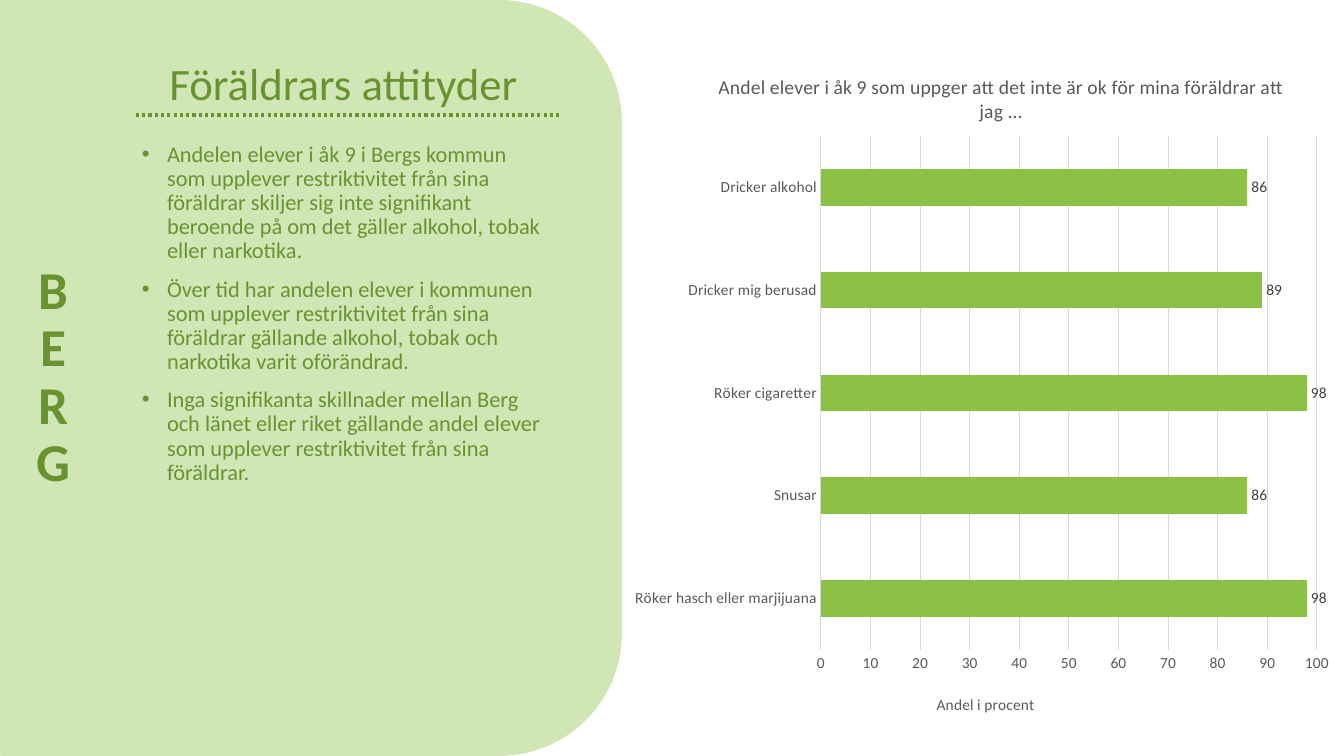
import pptx
import pptx.chart.data
import pptx.dml.color
import pptx.enum.chart
import pptx.enum.dml
import pptx.enum.shapes
import pptx.enum.text
import pptx.oxml
import pptx.oxml.ns
import pptx.util

RGB = pptx.dml.color.RGBColor
PALE = RGB(0xD1, 0xE6, 0xB5)
DARK = RGB(0x69, 0x93, 0x31)
BAR = RGB(0x8B, 0xC1, 0x45)
GRID = RGB(0xD9, 0xD9, 0xD9)
AXIS_TEXT = RGB(0x59, 0x59, 0x59)
LABEL_TEXT = RGB(0x40, 0x40, 0x40)
BLACK = RGB(0, 0, 0)
FONT = "Calibri"
EMU_PER_PX = 914400 / 100.8

HEADING = "Föräldrars attityder "
PLACE = "BERG"
BULLETS = [
    [("Andelen elever i åk 9 i Bergs kommun som upplever restriktivitet från sina "
      "föräldrar skiljer sig inte signifikant beroende på om det gäller alkohol, "
      "tobak eller narkotika.", False)],
    [("Över tid har andelen elever i kommunen som upplever restriktivitet från sina "
      "föräldrar gällande alkohol, tobak och narkotika varit oförändrad", False),
     (".", True)],
    [("Inga signifikanta skillnader mellan Berg och länet eller riket gällande andel "
      "elever som upplever restriktivitet från sina föräldrar.", False)],
]
CHART_TITLE = "Andel elever i åk 9 som uppger att det inte är ok för mina föräldrar att jag ..."
AXIS_TITLE = "Andel i procent"
ATTITUDES = {
    "Röker hasch eller marjijuana": 98,
    "Snusar": 86,
    "Röker cigaretter": 98,
    "Dricker mig berusad": 89,
    "Dricker alkohol": 86,
}

PANEL_BOX = (-115, 0, 737, 756)
HEADING_BOX = (110, 33, 477, 82)
BODY_BOX = (132, 138, 424, 435)
PLACE_BOX = (0, 12, 106, 733)
CHART_BOX = (621, 46, 723, 684)
PLOT_BOX = (821, 136, 496, 514)
CHART_TITLE_AT = (715, 70)
AXIS_TITLE_AT = (934, 691)
RULE = (136, 115, 560, 115)


def px(*lengths):
    return [round(n * EMU_PER_PX) for n in lengths]


def style(font, size, color, bold=False, italic=False):
    font.name, font.size, font.color.rgb = FONT, pptx.util.Pt(size), color
    font.bold, font.italic = bold, italic


def add_run(p, text, size, color, **look):
    r = p.add_run()
    r.text = text
    style(r.font, size, color, **look)


def add_panel(slide, kind, box):
    sp = slide.shapes.add_shape(kind, *px(*box))
    sp.shadow.inherit = False
    sp.fill.solid()
    sp.fill.fore_color.rgb = PALE
    sp.line.fill.background()
    return sp


def add_label(slide, box, text, size, bold=False):
    tf = slide.shapes.add_textbox(*px(*box)).text_frame
    tf.word_wrap = True
    tf.vertical_anchor = pptx.enum.text.MSO_ANCHOR.BOTTOM
    p = tf.paragraphs[0]
    p.alignment = pptx.enum.text.PP_ALIGN.CENTER
    p.line_spacing = 0.9
    add_run(p, text, size, DARK, bold=bold)
    return tf


def fill_body(tf):
    tf.word_wrap = True
    tf.vertical_anchor = pptx.enum.text.MSO_ANCHOR.TOP
    for i, runs in enumerate(BULLETS):
        p = tf.add_paragraph() if i else tf.paragraphs[0]
        p.alignment = pptx.enum.text.PP_ALIGN.LEFT
        p.line_spacing = 0.9
        p.space_before = pptx.util.Pt(10)
        pPr = p._p.get_or_add_pPr()
        indent = pptx.util.Inches(0.25)
        pPr.set("marL", str(indent))
        pPr.set("indent", str(-indent))
        for tag, key, value in (("buFont", "typeface", "Arial"), ("buChar", "char", "•")):
            pPr.append(pptx.oxml.parse_xml(
                f'<a:{tag} {pptx.oxml.ns.nsdecls("a")} {key}="{value}"/>'))
        for text, italic in runs:
            add_run(p, text, 16, DARK, italic=italic)


def place(element, before, x, y, w=None, h=None):
    left, top, width, height = CHART_BOX
    parts = {"xMode": "edge", "yMode": "edge",
             "x": round((x - left) / width, 4), "y": round((y - top) / height, 4)}
    if w:
        parts = {"layoutTarget": "inner", **parts,
                 "w": round(w / width, 4), "h": round(h / height, 4)}
    inner = "".join(f'<c:{k} val="{v}"/>' for k, v in parts.items())
    for old in element.findall(pptx.oxml.ns.qn("c:layout")):
        element.remove(old)
    layout = pptx.oxml.parse_xml(
        f'<c:layout {pptx.oxml.ns.nsdecls("c")}><c:manualLayout>{inner}'
        '</c:manualLayout></c:layout>')
    element.insert(before, layout)


def set_title(title, text, size, at):
    p = title.text_frame.paragraphs[0]
    p.alignment = pptx.enum.text.PP_ALIGN.CENTER
    add_run(p, text, size, AXIS_TEXT)
    place(title._element, 1, *at)


def add_attitude_chart(slide):
    data = pptx.chart.data.CategoryChartData(number_format="0")
    data.categories = list(ATTITUDES)
    data.add_series("Andel", list(ATTITUDES.values()))
    chart = slide.shapes.add_chart(
        pptx.enum.chart.XL_CHART_TYPE.BAR_CLUSTERED, *px(*CHART_BOX), data).chart
    style(chart.font, 11, BLACK)
    chart.has_legend = False
    chart.has_title = True
    set_title(chart.chart_title, CHART_TITLE, 14, CHART_TITLE_AT)
    chart.chart_title.include_in_layout = False

    plot = chart.plots[0]
    plot.vary_by_categories = False
    plot.gap_width = 182
    place(chart._chartSpace.chart.plotArea, 0, *PLOT_BOX)
    series = plot.series[0]
    series.format.fill.solid()
    series.format.fill.fore_color.rgb = BAR
    labels = series.data_labels
    labels.show_value = True
    labels.position = pptx.enum.chart.XL_LABEL_POSITION.OUTSIDE_END
    labels.number_format, labels.number_format_is_linked = "0", False
    style(labels.font, 11, LABEL_TEXT)

    cat, val = chart.category_axis, chart.value_axis
    for axis in (cat, val):
        axis.major_tick_mark = axis.minor_tick_mark = pptx.enum.chart.XL_TICK_MARK.NONE
        style(axis.tick_labels.font, 11, AXIS_TEXT)
    val.minimum_scale, val.maximum_scale, val.major_unit = 0, 100, 10
    val.tick_labels.number_format = "0"
    val.tick_labels.number_format_is_linked = False
    val.has_major_gridlines = True
    for line in (cat.format.line, val.major_gridlines.format.line):
        line.color.rgb = GRID
        line.width = pptx.util.Pt(0.75)
    val.format.line.fill.background()
    set_title(val.axis_title, AXIS_TITLE, 11, AXIS_TITLE_AT)


def add_rule(slide):
    rule = slide.shapes.add_connector(pptx.enum.shapes.MSO_CONNECTOR.STRAIGHT, *px(*RULE))
    rule.line.color.rgb = DARK
    rule.line.width = pptx.util.Pt(2.25)
    rule.line.dash_style = pptx.enum.dml.MSO_LINE.ROUND_DOT
    rule._element.spPr.append(pptx.oxml.parse_xml(
        f'<a:effectLst {pptx.oxml.ns.nsdecls("a")}/>'))


def main():
    prs = pptx.Presentation()
    prs.slide_width, prs.slide_height = px(1344, 756)
    slide = prs.slides.add_slide(prs.slide_layouts[6])
    shapes = pptx.enum.shapes.MSO_SHAPE
    add_panel(slide, shapes.ROUNDED_RECTANGLE, PANEL_BOX)
    add_label(slide, HEADING_BOX, HEADING, 32)
    fill_body(add_panel(slide, shapes.RECTANGLE, BODY_BOX).text_frame)
    tf = add_label(slide, PLACE_BOX, PLACE, 38, bold=True)
    tf._txBody.bodyPr.set("vert", "wordArtVert")
    add_attitude_chart(slide)
    add_rule(slide)
    prs.save("out.pptx")


if __name__ == "__main__":
    main()
